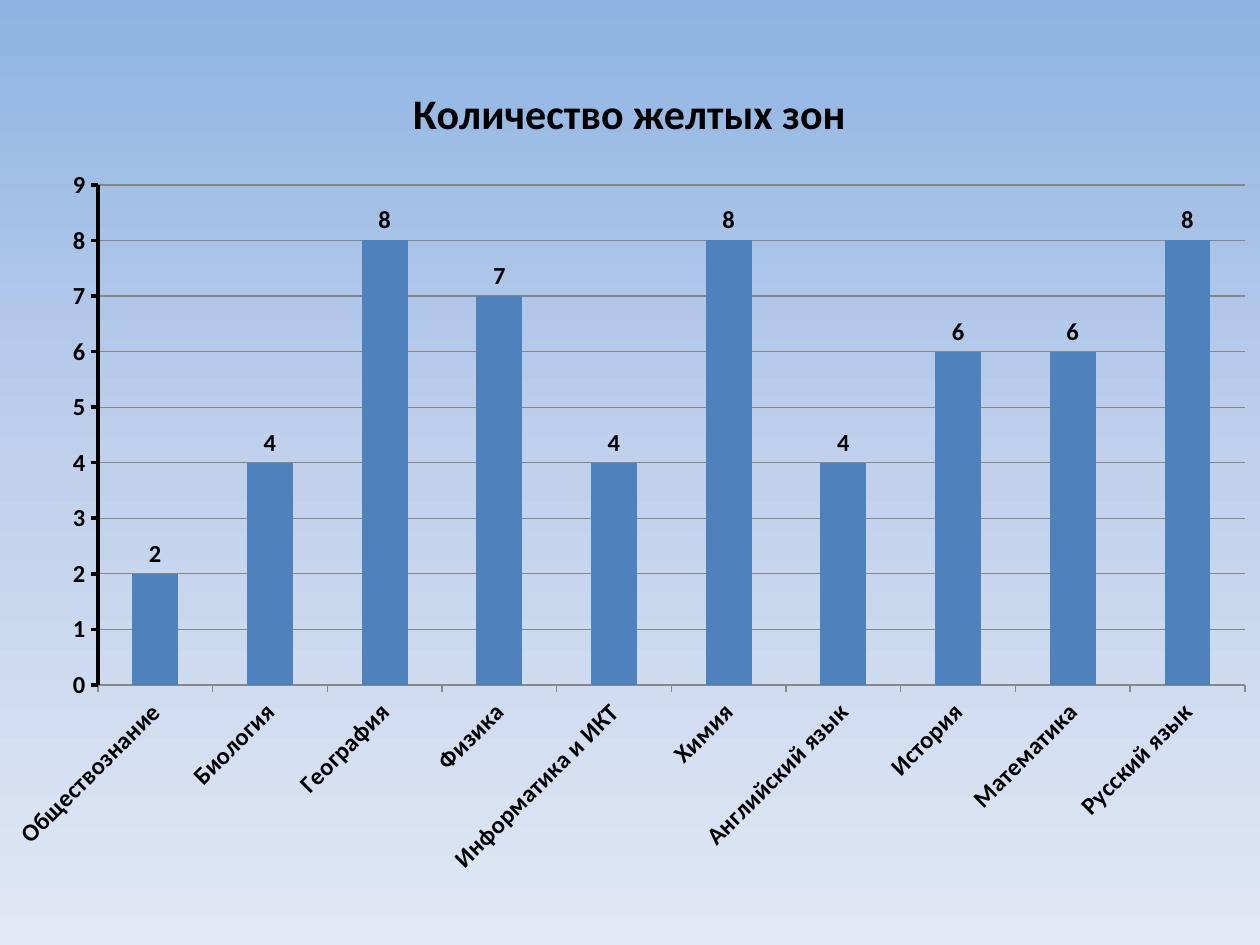
from copy import deepcopy
from dataclasses import dataclass

from lxml import etree
from pptx import Presentation
from pptx.chart.data import CategoryChartData
from pptx.dml.color import RGBColor
from pptx.enum.chart import XL_CHART_TYPE, XL_LABEL_POSITION, XL_TICK_MARK
from pptx.oxml.ns import qn
from pptx.util import Pt

PX = 914400 // 126
COLUMNS = XL_CHART_TYPE.COLUMN_CLUSTERED
OUTSIDE_END = XL_LABEL_POSITION.OUTSIDE_END
TICK_OUT = XL_TICK_MARK.OUTSIDE
TICK_NONE = XL_TICK_MARK.NONE

CHART_BOX = (-11, 54, 1281, 838)
PLOT_BOX = (98, 185, 1147, 500)
LABEL_ANGLE = -45
TITLE = "Количество желтых зон"
YELLOW_ZONES = {
    "Обществознание": 2,
    "Биология": 4,
    "География": 8,
    "Физика": 7,
    "Информатика и ИКТ": 4,
    "Химия": 8,
    "Английский язык": 4,
    "История": 6,
    "Математика": 6,
    "Русский язык": 8,
}


@dataclass(frozen=True)
class Theme:
    font: str = "Calibri"
    text: str = "000000"
    grid: str = "878787"
    column: str = "4F81BD"
    sky: tuple = ((0, "8EB4E3"), (0.5, "C1D1EC"), (1, "E0E8F5"))
    title_size: int = 24
    label_size: int = 14
    base_size: int = 10
    thin: float = 0.75
    thick: float = 2


THEME = Theme()


def px(length):
    return length * PX


def set_all(target, **values):
    for name, value in values.items():
        setattr(target, name, value)


def style_font(font, size, bold=True):
    set_all(font, name=THEME.font, size=Pt(size), bold=bold)
    font.color.rgb = RGBColor.from_string(THEME.text)


def style_line(line, color, width):
    line.color.rgb = RGBColor.from_string(color)
    line.width = Pt(width)


def paint_background(slide):
    fill = slide.background.fill
    fill.gradient()
    fill.gradient_angle = 270
    stop_list = slide._element.xpath(".//a:gsLst")[0]
    stop_list.append(deepcopy(stop_list[0]))
    for stop, (position, color) in zip(fill.gradient_stops, THEME.sky):
        stop.position = position
        stop.color.rgb = RGBColor.from_string(color)


def place_plot(chart):
    plot_area = chart._chartSpace.chart.plotArea
    for old_layout in plot_area.findall(qn("c:layout")):
        plot_area.remove(old_layout)
    layout = etree.Element(qn("c:layout"))
    manual = etree.SubElement(layout, qn("c:manualLayout"))
    left, top, width, height = CHART_BOX
    plot_left, plot_top, plot_width, plot_height = PLOT_BOX
    settings = {
        "layoutTarget": "inner",
        "xMode": "edge",
        "yMode": "edge",
        "x": (plot_left - left) / width,
        "y": (plot_top - top) / height,
        "w": plot_width / width,
        "h": plot_height / height,
    }
    for tag, value in settings.items():
        etree.SubElement(manual, qn(f"c:{tag}")).set("val", str(value))
    plot_area.insert(0, layout)


def style_title(chart):
    chart.has_title = True
    chart.chart_title.include_in_layout = False
    paragraph = chart.chart_title.text_frame.paragraphs[0]
    title = paragraph.add_run()
    title.text = TITLE
    style_font(title.font, THEME.title_size)


def style_axis(axis, color, width):
    set_all(axis, major_tick_mark=TICK_OUT, minor_tick_mark=TICK_NONE)
    style_font(axis.tick_labels.font, THEME.label_size)
    style_line(axis.format.line, color, width)


def style_axes(chart):
    subjects, counts = chart.category_axis, chart.value_axis
    style_axis(subjects, THEME.grid, THEME.thin)
    style_axis(counts, THEME.text, THEME.thick)
    subjects.has_major_gridlines = False
    subject_text = subjects._element.find(qn("c:txPr")).find(qn("a:bodyPr"))
    subject_text.set("rot", str(LABEL_ANGLE * 60000))
    set_all(counts, minimum_scale=0, maximum_scale=9, major_unit=1,
            has_major_gridlines=True)
    set_all(counts.tick_labels, number_format="0", number_format_is_linked=False)
    style_line(counts.major_gridlines.format.line, THEME.grid, THEME.thin)


def style_columns(plot):
    set_all(plot, gap_width=150, vary_by_categories=False, has_data_labels=True)
    zones = plot.series[0]
    zones.format.fill.solid()
    zones.format.fill.fore_color.rgb = RGBColor.from_string(THEME.column)
    set_all(plot.data_labels, show_value=True, position=OUTSIDE_END,
            number_format="0", number_format_is_linked=False)
    style_font(plot.data_labels.font, THEME.label_size)


def add_zone_chart(slide):
    data = CategoryChartData(number_format="0")
    data.categories = list(YELLOW_ZONES)
    data.add_series(TITLE, list(YELLOW_ZONES.values()))
    chart = slide.shapes.add_chart(COLUMNS, *map(px, CHART_BOX), data).chart
    chart.has_legend = False
    style_font(chart.font, THEME.base_size, bold=False)
    style_title(chart)
    style_axes(chart)
    style_columns(chart.plots[0])
    place_plot(chart)


def main():
    deck = Presentation()
    set_all(deck, slide_width=px(1260), slide_height=px(945))
    slide = deck.slides.add_slide(deck.slide_layouts[6])
    paint_background(slide)
    add_zone_chart(slide)
    deck.save("out.pptx")


if __name__ == "__main__":
    main()
